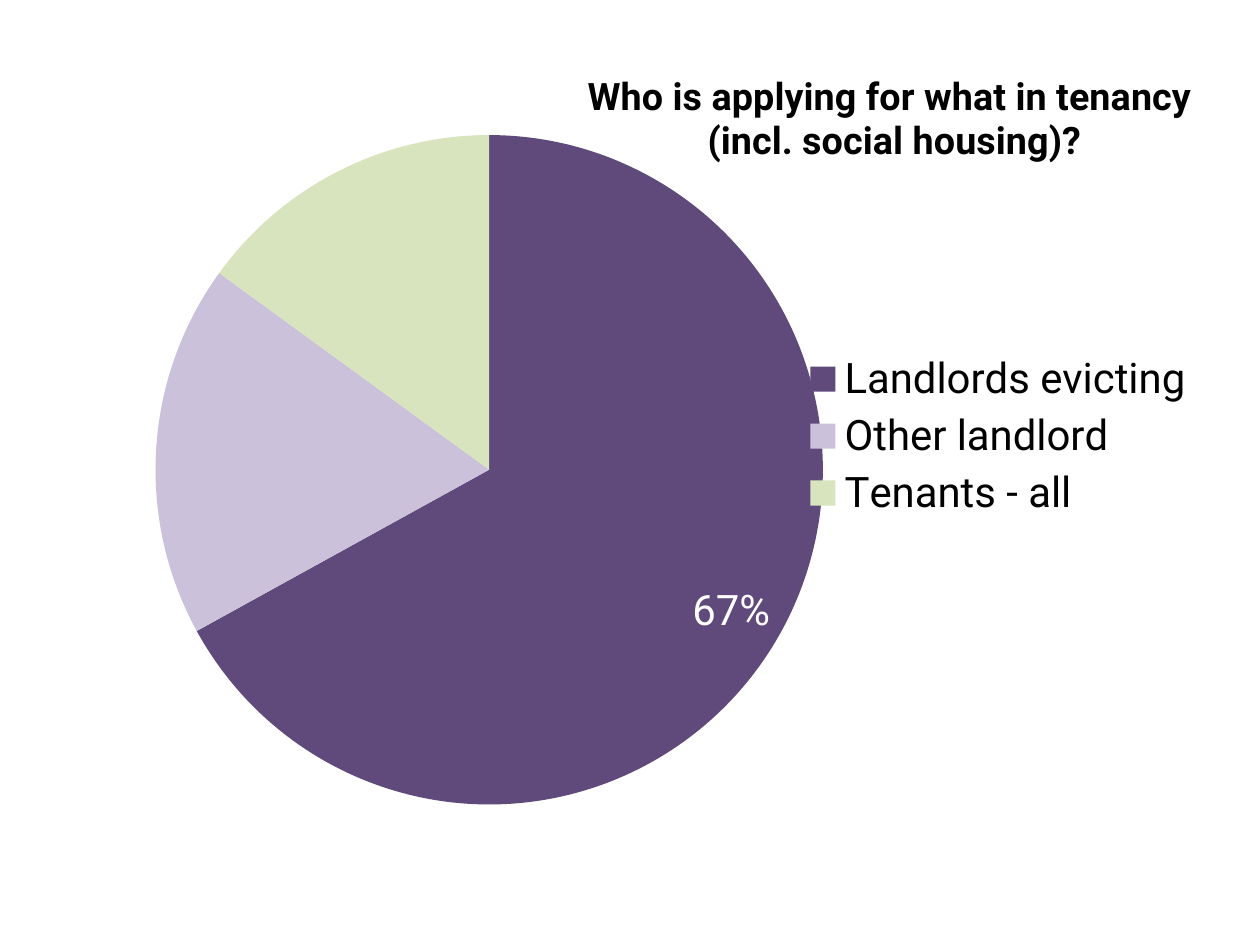
import pptx
import pptx.chart.data
import pptx.dml.color
import pptx.enum.chart
import pptx.oxml
import pptx.oxml.ns
import pptx.util


def rgb(value):
    """Turn a hex string into a colour."""
    return pptx.dml.color.RGBColor.from_string(value)


class Deck:
    """Holds the style and the current slide."""

    font = "Roboto"
    ink = "000000"
    paper = "FFFFFF"
    slices = ["604A7B", "CCC1DA", "D7E4BD"]
    base_size, title_size, large_size = 18, 21.6, 24

    def __init__(self, prs):
        """Add a blank slide."""
        self.prs = prs
        self.s = prs.slides.add_slide(prs.slide_layouts[6])

    def style(self, font, size, color, bold=False):
        """Apply the typeface, size, colour and weight."""
        font.name, font.size, font.bold = self.font, pptx.util.Pt(size), bold
        font.color.rgb = rgb(color)

    def place(self, chart, tag, inner=False, **shares):
        """Place a chart part by shares of the chart's size."""
        qn = pptx.oxml.ns.qn
        part = chart.element.xpath(f".//c:{tag}")[0]
        for old in part.findall(qn("c:layout")):
            part.remove(old)
        target = '<c:layoutTarget val="inner"/>' if inner else ""
        modes = "".join(f'<c:{k}Mode val="edge"/>' for k in "xy")
        values = "".join(f'<c:{k} val="{v}"/>' for k, v in shares.items())
        layout = pptx.oxml.parse_xml(
            f'<c:layout {pptx.oxml.ns.nsdecls("c")}><c:manualLayout>'
            f"{target}{modes}{values}</c:manualLayout></c:layout>")
        overlay = part.find(qn("c:overlay"))
        if overlay is None:
            part.insert(0, layout)
        else:
            overlay.addprevious(layout)

    def pie(self, x, y, w, h, categories, values):
        """Add a pie chart at shares of the slide's size."""
        data = pptx.chart.data.CategoryChartData()
        data.categories = categories
        data.add_series("Series 1", values)
        width, height = self.prs.slide_width, self.prs.slide_height
        chart = self.s.shapes.add_chart(
            pptx.enum.chart.XL_CHART_TYPE.PIE, int(x * width), int(y * height),
            int(w * width), int(h * height), data).chart
        self.style(chart.font, self.base_size, self.ink)
        for i, color in enumerate(self.slices):
            fill = chart.plots[0].series[0].points[i].format.fill
            fill.solid()
            fill.fore_color.rgb = rgb(color)
        return chart

    def title(self, chart, lines, **shares):
        """Add a bold chart title with one paragraph a line."""
        chart.has_title = True
        tf = chart.chart_title.text_frame
        tf.text = "\n".join(lines)
        for p in tf.paragraphs:
            for r in p.runs:
                self.style(r.font, self.title_size, self.ink, True)
        chart.chart_title.include_in_layout = False
        self.place(chart, "title", **shares)

    def legend(self, chart, **shares):
        """Add a legend on the right."""
        chart.has_legend = True
        chart.legend.position = pptx.enum.chart.XL_LEGEND_POSITION.RIGHT
        chart.legend.include_in_layout = False
        self.style(chart.legend.font, self.large_size, self.ink)
        self.place(chart, "legend", **shares)

    def label(self, chart, index, text):
        """Write a label inside the edge of one slice."""
        label = chart.plots[0].series[0].points[index].data_label
        label.text_frame.text = text
        r = label.text_frame.paragraphs[0].runs[0]
        self.style(r.font, self.large_size, self.paper)
        label.position = pptx.enum.chart.XL_LABEL_POSITION.INSIDE_END


def main():
    """Build the tenancy slide."""
    prs = pptx.Presentation()
    prs.slide_width, prs.slide_height = pptx.util.Inches(10), pptx.util.Inches(7.5)
    deck = Deck(prs)
    chart = deck.pie(0.028, 0.048, 0.929, 0.819,
                     ["Landlords evicting", "Other landlord", "Tenants - all"],
                     [67, 18, 15])
    deck.title(chart, ["Who is applying for what in tenancy ",
                       "(incl. social housing)?"], x=0.47, y=0.03)
    deck.place(chart, "plotArea", inner=True, x=0.103, y=0.116, w=0.572, h=0.865)
    deck.legend(chart, x=0.65, y=0.39, w=0.35, h=0.23)
    deck.label(chart, 0, "67%")
    prs.save("out.pptx")


if __name__ == "__main__":
    main()
